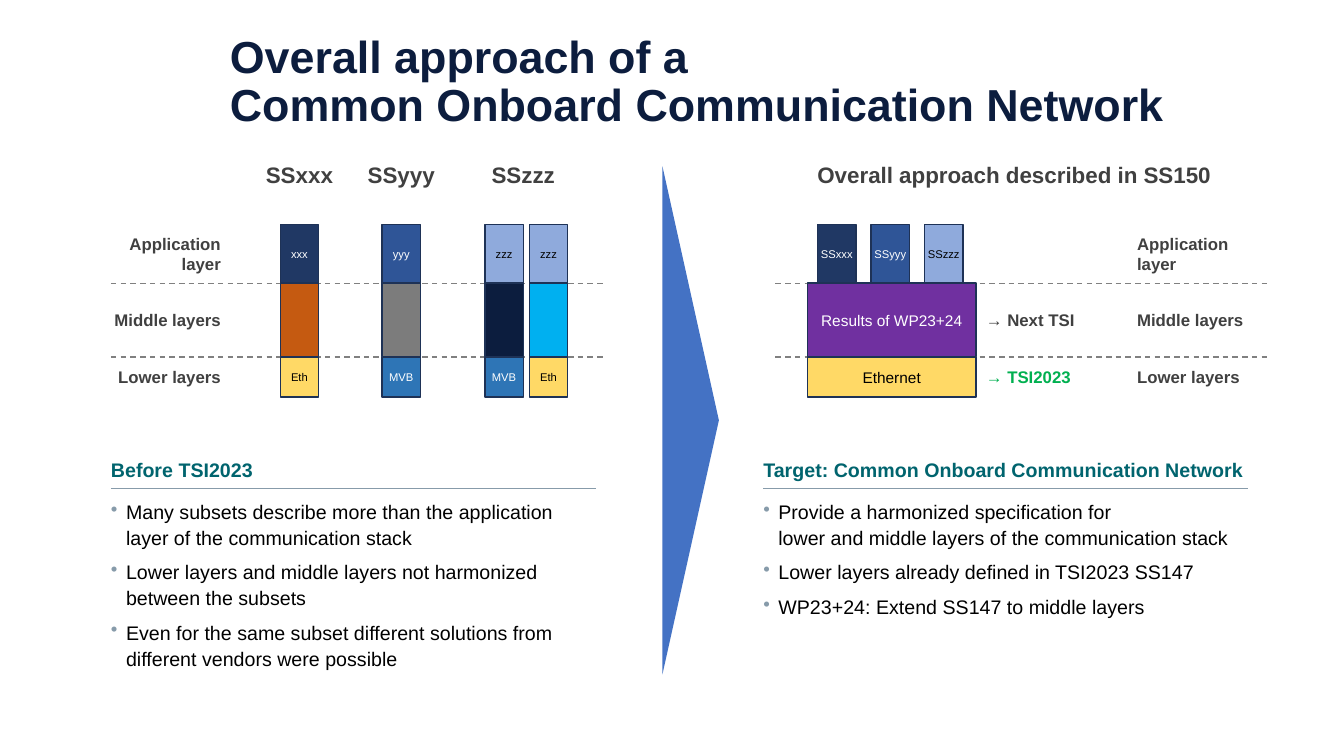
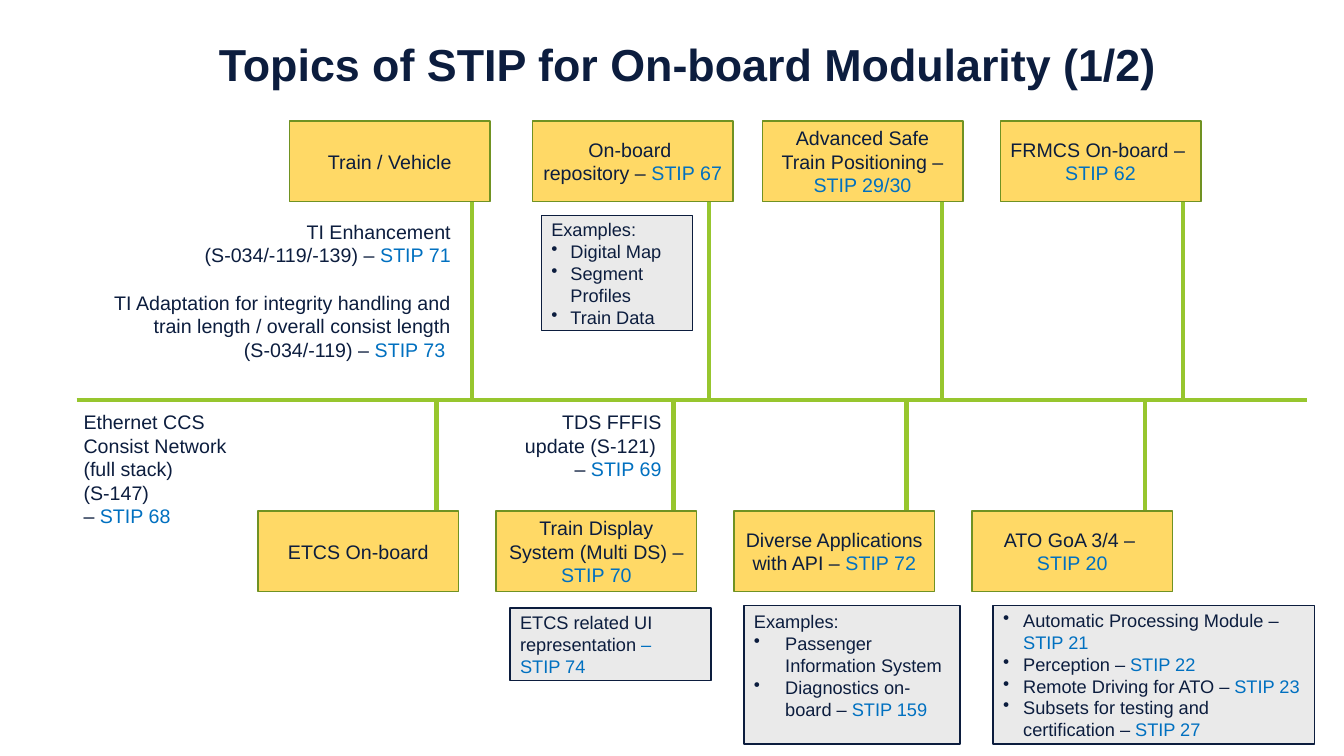
"""Build two slides on an onboard communication network and its modularity topics."""
from copy import deepcopy

from lxml import etree
from pptx import Presentation
from pptx.dml.color import RGBColor
from pptx.enum.dml import MSO_LINE
from pptx.enum.shapes import MSO_CONNECTOR, MSO_SHAPE
from pptx.enum.text import MSO_ANCHOR, MSO_AUTO_SIZE, PP_ALIGN
from pptx.oxml.ns import qn
from pptx.util import Inches, Pt

FONT = "Arial"
LEFT, CENTER, RIGHT = PP_ALIGN.LEFT, PP_ALIGN.CENTER, PP_ALIGN.RIGHT
TOP, MIDDLE = MSO_ANCHOR.TOP, MSO_ANCHOR.MIDDLE

COLORS = {
    "ink": "0C1D3E", "black": "000000", "white": "FFFFFF", "gray": "404040",
    "dash": "808080", "rule": "879BAA", "teal": "00646E", "link": "0070C0",
    "outline": "1E3256", "navy": "203864", "blue": "2F5597", "pale": "8FAADC",
    "orange": "C55A11", "steel": "7C7C7C", "cyan": "00B0F0", "bus": "2E75B6",
    "yellow": "FFD966", "purple": "7030A0", "arrow": "4472C4", "green": "00B050",
    "lime": "97C62E", "olive": "709222", "note": "EAEAEA",
}
DARK_FILLS = {"navy", "blue", "bus", "purple"}

LAYERS = [
    ("Application\nlayer", 2.23, 0.58, 2.27),
    ("Middle layers", 2.81, 0.73, 3.02),
    ("Lower layers", 3.54, 0.4, 3.59),
]
CELL_W = 0.38
STACKS = [
    (2.78, [("xxx", "navy"), ("", "orange"), ("Eth", "yellow")]),
    (3.79, [("yyy", "blue"), ("", "steel"), ("MVB", "bus")]),
    (4.81, [("zzz", "pale"), ("", "ink"), ("MVB", "bus")]),
    (5.25, [("zzz", "pale"), ("", "cyan"), ("Eth", "yellow")]),
]
TARGET_APPS = [("SSxxx", "navy"), ("SSyyy", "blue"), ("SSzzz", "pale")]
TARGET_BASE = [("Results of WP23+24", "purple"), ("Ethernet", "yellow")]
TARGET_STATUS = [("→ Next TSI", "gray"), ("→ TSI2023", "green")]
HEADINGS = [
    ("SSxxx", 2.97, 1.2), ("SSyyy", 3.98, 1.2), ("SSzzz", 5.19, 1.2),
    ("Overall approach described in SS150", 10.06, 4.4),
]
PANELS = [
    (1.1, "Before TSI2023", [
        "•Many subsets describe more than the application layer of the communication stack",
        "•Lower layers and middle layers not harmonized between the subsets",
        "•Even for the same subset different solutions from different vendors were possible",
    ]),
    (7.57, "Target: Common Onboard Communication Network", [
        "•Provide a harmonized specification for \nlower and middle layers of the communication stack",
        "•Lower layers already defined in TSI2023 SS147",
        "•WP23+24: Extend SS147 to middle layers",
    ]),
]

AXIS_Y = 3.97
TOPIC_W, TOPIC_H = 1.99, 0.8
TOPIC_ROWS = [
    (1.2, [
        (2.87, 4.68, "Train / Vehicle"),
        (5.28, 7.03, "On-board \nrepository – |STIP 67"),
        (7.56, 9.34, "Advanced Safe Train Positioning – |STIP 29/30"),
        (9.92, 11.73, "FRMCS On-board – \n|STIP 62"),
    ]),
    (5.07, [
        (2.56, 4.33, "ETCS On-board"),
        (4.92, 6.68, "Train Display System (Multi DS) – |STIP 70"),
        (7.28, 8.99, "Diverse Applications with API – |STIP 72"),
        (9.64, 11.36, "ATO GoA 3/4 – \n|STIP 20"),
    ]),
]
REMARKS = [
    ((0.99, 2.13, 3.58, 1.51), RIGHT, [
        "TI Enhancement\n(S-034/-119/-139) – |STIP 71",
        "TI Adaptation for integrity handling and train length / overall consist length\n"
        "(S-034/-119) – |STIP 73 ",
    ]),
    ((4.97, 4.02, 1.69, 0.81), RIGHT, ["TDS FFFIS update (S-121) \n– |STIP 69"]),
    ((0.73, 4.02, 1.69, 1.28), LEFT,
     ["Ethernet CCS Consist Network (full stack) \n(S-147) \n– |STIP 68"]),
]
NOTES = [
    ((5.37, 2.14, 1.5, 1.14), MIDDLE, 0.19,
     ["Examples:", "•Digital Map", "•Segment Profiles", "•Train Data"]),
    ((5.06, 6.03, 1.99, 0.72), MIDDLE, 0,
     ["ETCS related UI representation |– \nSTIP 74"]),
    ((7.38, 6.01, 2.14, 1.37), TOP, 0.31,
     ["Examples:", "•Passenger Information System", "•Diagnostics on-board – |STIP 159"]),
    ((9.85, 6.01, 3.19, 1.37), MIDDLE, 0.2,
     ["•Automatic Processing Module –| STIP 21", "•Perception – |STIP 22",
      "•Remote Driving for ATO – |STIP 23",
      "•Subsets for testing and certification –| STIP 27"]),
]


def rgb(name):
    return RGBColor.from_string(COLORS[name])


def add_bullet(p, indent, color):
    pPr = p._p.get_or_add_pPr()
    pPr.set("marL", str(Inches(indent)))
    pPr.set("indent", str(-Inches(indent)))
    clr = etree.SubElement(pPr, qn("a:buClr"))
    etree.SubElement(clr, qn("a:srgbClr")).set("val", COLORS[color])
    etree.SubElement(pPr, qn("a:buChar")).set("char", "•")


def write(sp, paras, size=14, color="ink", bold=False, align=LEFT, anchor=TOP,
          inset=(0.1, 0.05), indent=0, bullet="ink", before=0, spacing=None):
    """Fill a shape with paragraphs; "|" switches to link colour, "•" marks a bullet."""
    tf = sp.text_frame
    tf.word_wrap, tf.auto_size, tf.vertical_anchor = True, MSO_AUTO_SIZE.NONE, anchor
    tf.margin_left = tf.margin_right = Inches(inset[0])
    tf.margin_top = tf.margin_bottom = Inches(inset[1])
    for i, para in enumerate(paras):
        p = tf.add_paragraph() if i else tf.paragraphs[0]
        p.alignment = align
        if i and before:
            p.space_before = Pt(before)
        if spacing:
            p.line_spacing = spacing
        if para.startswith("•"):
            add_bullet(p, indent, bullet)
        for part, run_color in zip(para.lstrip("•").split("|"), (color, "link")):
            for j, line in enumerate(part.split("\n")):
                if j:
                    p.add_line_break()
                    br = p._p[-1]
                r = p.add_run()
                r.text = line
                r.font.name, r.font.size, r.font.bold = FONT, Pt(size), bold
                r.font.color.rgb = rgb(run_color)
                if j:
                    br.append(deepcopy(r._r.rPr))


def add_text(s, box, paras, **fmt):
    write(s.shapes.add_textbox(*map(Inches, box)), paras, **fmt)


def add_box(s, box, fill, line=None, shape=MSO_SHAPE.RECTANGLE):
    sp = s.shapes.add_shape(shape, *map(Inches, box))
    sp.shadow.inherit = False
    sp.fill.solid()
    sp.fill.fore_color.rgb = rgb(fill)
    if line:
        sp.line.color.rgb = rgb(line)
        sp.line.width = Pt(1)
    else:
        sp.line.fill.background()
    return sp


def add_line(s, x1, y1, x2, y2, color, width, dash=None):
    ln = s.shapes.add_connector(MSO_CONNECTOR.STRAIGHT, *map(Inches, (x1, y1, x2, y2)))
    ln.line.color.rgb = rgb(color)
    ln.line.width = Pt(width)
    if dash:
        ln.line.dash_style = dash
    etree.SubElement(ln._element.spPr, qn("a:effectLst"))


def add_cell(s, box, text, fill, size=8):
    sp = add_box(s, box, fill, "outline")
    if text:
        write(sp, [text], size=size, color="white" if fill in DARK_FILLS else "black",
              align=CENTER, anchor=MIDDLE, inset=(0, 0.05))


def add_slide(prs, title, box, **fmt):
    s = prs.slides.add_slide(prs.slide_layouts[5])
    sp = s.shapes.title
    sp.left, sp.top, sp.width, sp.height = map(Inches, box)
    write(sp, [title], size=32, bold=True, **fmt)
    return s


def build_approach(prs):
    s = add_slide(prs, "Overall approach of a \nCommon Onboard Communication Network",
                  (2.18, 0.29, 10.9, 0.86), spacing=0.9)
    for x in (1.1, 7.69):
        for _, y, _, _ in LAYERS[1:]:
            add_line(s, x, y, x + 4.9, y, "dash", 1, MSO_LINE.DASH)
    for text, y, h, label_y in LAYERS:
        for x, align in ((0.99, RIGHT), (11.18, LEFT)):
            add_text(s, (x, label_y, 1.3, 0.5), [text], size=12, color="gray",
                     bold=True, align=align)
    for x, cells in STACKS:
        for (text, fill), (_, y, h, _) in zip(cells, LAYERS):
            add_cell(s, (x, y, CELL_W, h), text, fill)
    for text, center, w in HEADINGS:
        add_text(s, (center - w / 2, 1.55, w, 0.37), [text], size=16, color="gray",
                 bold=True, align=CENTER)

    arrow = add_box(s, (4.33, 3.89, 5.04, 0.56), "arrow", shape=MSO_SHAPE.ISOSCELES_TRIANGLE)
    arrow.rotation = 90

    _, app_y, app_h, _ = LAYERS[0]
    for i, (text, fill) in enumerate(TARGET_APPS):
        add_cell(s, (8.11 + 0.53 * i, app_y, CELL_W, app_h), text, fill)
    for (text, fill), (status, color), (_, y, h, label_y) in zip(
            TARGET_BASE, TARGET_STATUS, LAYERS[1:]):
        add_cell(s, (8.01, y, 1.67, h), text, fill, size=11)
        add_text(s, (9.68, label_y, 1.3, 0.3), [status], size=12, color=color, bold=True)

    for x, heading, bullets in PANELS:
        add_text(s, (x, 4.46, 4.81, 0.39), [heading], color="teal", bold=True,
                 anchor=MIDDLE, inset=(0, 0))
        add_line(s, x, 4.85, x + 4.81, 4.85, "rule", 0.75)
        add_text(s, (x, 4.86, 4.81, 1.74), bullets, color="black", inset=(0, 0.08),
                 indent=0.15, bullet="rule", before=6, spacing=1.1)


def build_topics(prs):
    s = add_slide(prs, "Topics of STIP for On-board Modularity (1/2)",
                  (2.07, 0.31, 10.43, 0.8))
    add_line(s, 0.76, AXIS_Y, 12.96, AXIS_Y, "lime", 3)
    for y, topics in TOPIC_ROWS:
        edge = y + TOPIC_H if y < AXIS_Y else y
        for x, stem_x, text in topics:
            add_line(s, stem_x, edge, stem_x, AXIS_Y, "lime", 3)
            write(add_box(s, (x, y, TOPIC_W, TOPIC_H), "yellow", "olive"), [text],
                  align=CENTER, anchor=MIDDLE)
    for box, align, paras in REMARKS:
        add_text(s, box, paras, align=align, before=17)
    for box, anchor, indent, paras in NOTES:
        sp = add_box(s, box, "note", "ink", MSO_SHAPE.FLOWCHART_PROCESS)
        write(sp, paras, size=13, anchor=anchor, indent=indent)


def main():
    prs = Presentation()
    prs.slide_width, prs.slide_height = Inches(13.33), Inches(7.5)
    build_approach(prs)
    build_topics(prs)
    prs.save("out.pptx")


if __name__ == "__main__":
    main()
